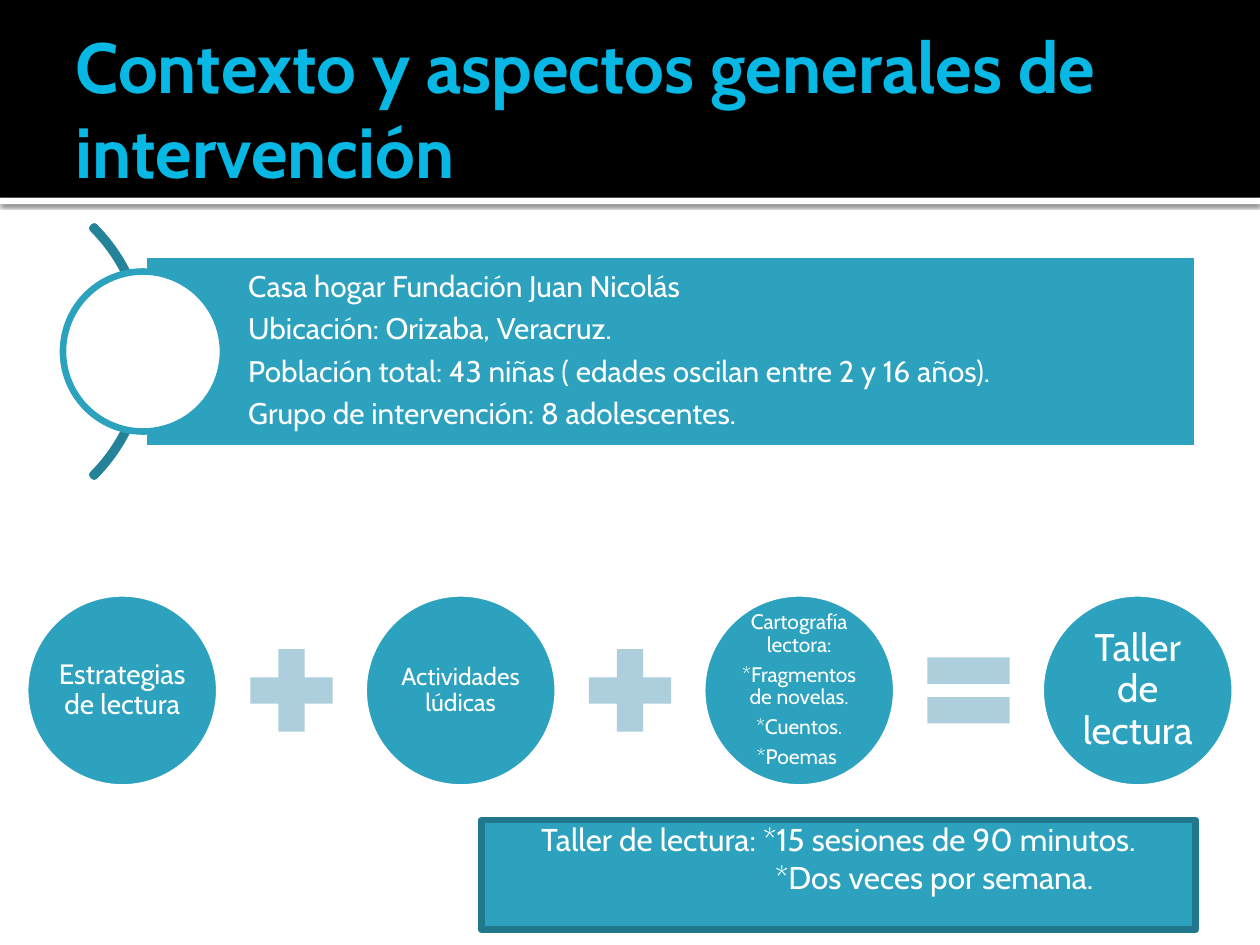
import pptx
import pptx.dml.color
import pptx.enum.shapes
import pptx.enum.text
import pptx.oxml
import pptx.oxml.ns
import pptx.util

Inches, Pt = pptx.util.Inches, pptx.util.Pt
SHAPE = pptx.enum.shapes.MSO_SHAPE
ANCHOR = pptx.enum.text.MSO_ANCHOR
ALIGN = pptx.enum.text.PP_ALIGN

FONT = "Cabin"
COLORS = {
    "black": "000000",
    "white": "FFFFFF",
    "title": "08B8E4",
    "teal": "2DA2BF",
    "arc": "248299",
    "border": "21788D",
    "operator": "ADCEDC",
}


def rgb(name):
    """Return the named palette colour."""
    return pptx.dml.color.RGBColor.from_string(COLORS[name])


def add_shape(slide, kind, box, fill=None, line=None):
    """Add a flat preset shape in a box of inches."""
    sp = slide.shapes.add_shape(kind, *map(Inches, box))
    sp.shadow.inherit = False
    if fill:
        sp.fill.solid()
        sp.fill.fore_color.rgb = rgb(fill)
    else:
        sp.fill.background()
    if line:
        sp.line.color.rgb = rgb(line)
        sp.line.width = Pt(3.78)
    else:
        sp.line.fill.background()
    return sp


def set_frame(sp, insets, anchor=ANCHOR.MIDDLE):
    """Set wrapping, anchor and insets (left, top, right, bottom)."""
    tf = sp.text_frame
    tf.word_wrap = True
    tf.auto_size = pptx.enum.text.MSO_AUTO_SIZE.NONE
    tf.vertical_anchor = anchor
    tf.margin_left, tf.margin_top, tf.margin_right, tf.margin_bottom = map(Inches, insets)
    return tf


def add_lines(tf, lines, size, align, color="white", bold=False, spacing=None):
    """Write one paragraph per line."""
    for i, text in enumerate(lines):
        p = tf.add_paragraph() if i else tf.paragraphs[0]
        p.alignment = align
        if spacing:
            p.line_spacing = spacing
            p.space_after = Pt(round(size * 0.35, 1))
        r = p.add_run()
        r.text = text
        r.font.name = FONT
        r.font.size = Pt(size)
        r.font.bold = bold
        r.font.color.rgb = rgb(color)


def add_header(slide, box):
    """Draw the black band with its shadowed rule and fill the title."""
    left, top, width, height = box
    band = add_shape(slide, SHAPE.RECTANGLE, box, "black")
    rule = add_shape(slide, SHAPE.RECTANGLE, (left, top + height, width, 0.05), "white")
    effects = rule._element.spPr.find(pptx.oxml.ns.qn("a:effectLst"))
    effects.append(pptx.oxml.parse_xml(
        f'<a:outerShdw {pptx.oxml.ns.nsdecls("a")} blurRad="{Pt(2.5)}" dist="{Pt(0.8)}" '
        f'dir="5400000" algn="tl" rotWithShape="0"><a:srgbClr val="{COLORS["black"]}">'
        '<a:alpha val="60000"/></a:srgbClr></a:outerShdw>'))
    for sp in (band, rule):
        slide.shapes._spTree.insert(2, sp._element)

    title = slide.shapes.title
    title.left, title.top = Inches(left + 0.5), Inches(top + 0.17)
    title.width, title.height = Inches(width - 1), Inches(height - 0.2)
    tf = set_frame(title, (0.1, 0.05, 0.05, 0.05))
    add_lines(tf, ["Contexto y aspectos generales de intervención"], 40.5,
              ALIGN.LEFT, "title", bold=True)


def add_context(slide, box, lines):
    """Draw the context bar with the arc and circle at its left end."""
    left, top, width, height = box
    middle = top + height / 2
    arc_size, circle = 2.81, 1.27
    arc = add_shape(slide, SHAPE.BLOCK_ARC,
                    (left - 2.15, middle - arc_size / 2, arc_size, arc_size), line="arc")
    for i, value in enumerate((189, 27, 0.008)):
        arc.adjustments[i] = value
    bar = add_shape(slide, SHAPE.RECTANGLE, (left + 0.64, top, width - 0.64, height),
                    "teal", "white")
    add_lines(set_frame(bar, (0.83, 0.05, 0.05, 0.05)), lines, 17, ALIGN.LEFT, spacing=0.9)
    add_shape(slide, SHAPE.OVAL, (left, middle - circle / 2, circle, circle), "white", "teal")


def add_equation(slide, box, terms, operators):
    """Spread circles evenly over the box with an operator in each gap."""
    left, top, width, size = box
    pitch = (width - size) / (len(terms) - 1)
    sign = 0.89
    for i, (lines, points) in enumerate(terms):
        sp = add_shape(slide, SHAPE.OVAL, (left + i * pitch, top, size, size), "teal", "white")
        add_lines(set_frame(sp, (0.02,) * 4), lines, points, ALIGN.CENTER, spacing=0.9)
    for i, kind in enumerate(operators):
        x = left + i * pitch + (size + pitch - sign) / 2
        add_shape(slide, kind, (x, top + (size - sign) / 2, sign, sign), "operator")


def add_workshop(slide, box, lines):
    """Draw the bordered box with the workshop schedule."""
    sp = add_shape(slide, SHAPE.RECTANGLE, box, "teal", "border")
    tf = set_frame(sp, (0.1, 0, 0.1, 0), ANCHOR.TOP)
    add_lines(tf, lines, 18, ALIGN.CENTER)
    tf.paragraphs[1]._p.get_or_add_pPr().set("marL", str(Inches(1.52)))


def main():
    """Build and save the slide."""
    prs = pptx.Presentation()
    prs.slide_width, prs.slide_height = Inches(10), Inches(7.5)
    slide = prs.slides.add_slide(prs.slide_layouts[5])
    add_header(slide, (0, 0, 10, 1.57))
    add_context(slide, (0.5, 2.02, 9, 1.54), [
        "Casa hogar Fundación Juan Nicolás",
        "Ubicación: Orizaba, Veracruz.",
        "Población total: 43 niñas ( edades oscilan entre 2 y 16 años).",
        "Grupo de intervención: 8 adolescentes.",
    ])
    add_equation(slide, (0.2, 4.71, 9.6, 1.54), [
        (["Estrategias de lectura"], 16),
        (["Actividades lúdicas"], 14),
        (["Cartografía lectora:", "*Fragmentos de novelas.", "*Cuentos.", "*Poemas "], 12),
        (["Taller de lectura"], 22),
    ], [SHAPE.MATH_PLUS, SHAPE.MATH_PLUS, SHAPE.MATH_EQUAL])
    add_workshop(slide, (3.82, 6.51, 5.67, 0.87), [
        "Taller de lectura: *15 sesiones de 90 minutos.",
        "*Dos veces por semana.",
    ])
    prs.save("out.pptx")


if __name__ == "__main__":
    main()
